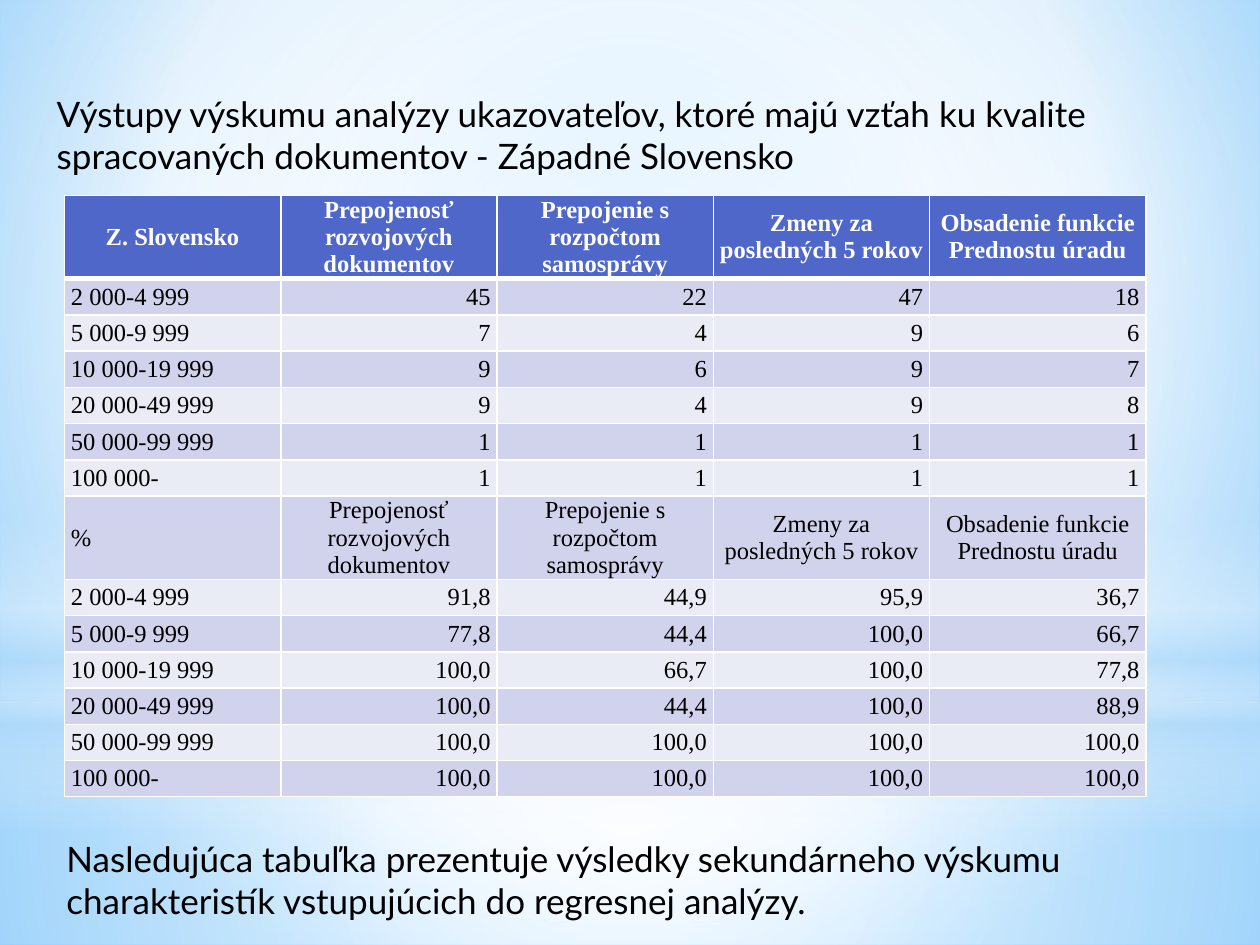
"""Build the slide with the Western Slovakia survey table."""
from lxml import etree
from pptx import Presentation
from pptx import util as u
from pptx.dml.color import RGBColor
from pptx.enum import shapes, text
from pptx.oxml import ns

TITLE = ("Výstupy výskumu analýzy ukazovateľov, ktoré majú vzťah ku kvalite "
         "spracovaných dokumentov - Západné Slovensko")
CLOSING = ("Nasledujúca tabuľka prezentuje výsledky sekundárneho výskumu "
           "charakteristík vstupujúcich do regresnej analýzy.")
INDICATORS = ["Prepojenosť rozvojových dokumentov", "Prepojenie s rozpočtom samosprávy",
              "Zmeny za posledných 5 rokov", "Obsadenie funkcie Prednostu úradu"]
SIZES = ["2 000-4 999", "5 000-9 999", "10 000-19 999",
         "20 000-49 999", "50 000-99 999", "100 000-"]
COUNTS = [["45", "22", "47", "18"], ["7", "4", "9", "6"], ["9", "6", "9", "7"],
          ["9", "4", "9", "8"], ["1"] * 4, ["1"] * 4]
SHARES = [["91,8", "44,9", "95,9", "36,7"], ["77,8", "44,4", "100,0", "66,7"],
          ["100,0", "66,7", "100,0", "77,8"], ["100,0", "44,4", "100,0", "88,9"],
          ["100,0"] * 4, ["100,0"] * 4]

BLACK = RGBColor(0x00, 0x00, 0x00)
WHITE = RGBColor(0xFF, 0xFF, 0xFF)
HEADER_BLUE = RGBColor(0x4E, 0x67, 0xC8)
BANDS = [RGBColor(0xE9, 0xEB, 0xF5), RGBColor(0xD0, 0xD3, 0xEB)]
SKY = RGBColor(0xB4, 0xDC, 0xFA)
BACKDROP_INNER = RGBColor(0x9E, 0xD5, 0xFF)
BACKDROP_OUTER = RGBColor(0x5B, 0xB9, 0xFF)

SLIDE_WIDTH, SLIDE_HEIGHT = u.Cm(25.4), u.Cm(19.05)
CENTRE = (50, 50, 50, 50)
BACKDROP_STOPS = [(0, BACKDROP_INNER, 100), (60, WHITE, 100), (100, BACKDROP_OUTER, 100)]
GLOWS = [
    (shapes.MSO_SHAPE.RECTANGLE, 14.17, 4.88, CENTRE,
     [(0, WHITE, 91), (37, WHITE, 76), (100, SKY, 79)]),
    (shapes.MSO_SHAPE.RECTANGLE, 0, 14.17, CENTRE,
     [(0, WHITE, 89), (48, WHITE, 62), (100, SKY, 79)]),
    (shapes.MSO_SHAPE.RECTANGLE, 10.46, 6.35, None,
     [(0, WHITE, 0), (29, WHITE, 30), (45, SKY, 40), (55, WHITE, 26),
      (65, SKY, 60), (100, WHITE, 0)]),
    (shapes.MSO_SHAPE.OVAL, 4.45, 14.17, CENTRE, [(0, WHITE, 100), (56, WHITE, 0)]),
]
TABLE_LEFT, TABLE_TOP, COLUMN_WIDTH = u.Cm(1.3), u.Cm(3.94), u.Cm(4.36)
HEADING_HEIGHT, ROW_HEIGHT = u.Cm(1.68), u.Cm(0.73)


def add_child(parent, tag, **attributes):
    child = etree.SubElement(parent, ns.qn(tag))
    for name, value in attributes.items():
        child.set(name, str(value))
    return child


def set_gradient(owner, stops, focus):
    """Replace the empty fill of an element; without a focus the blend runs downwards."""
    empty_fill = next(owner.iter(ns.qn("a:noFill")))
    gradient = etree.Element(ns.qn("a:gradFill"), rotWithShape="1")
    stop_list = add_child(gradient, "a:gsLst")
    for position, color, opacity in stops:
        stop = add_child(stop_list, "a:gs", pos=position * 1000)
        shade = add_child(stop, "a:srgbClr", val=color)
        if opacity < 100:
            add_child(shade, "a:alpha", val=opacity * 1000)
    if focus:
        route = add_child(gradient, "a:path", path="circle")
        sides = {side: share * 1000 for side, share in zip("ltrb", focus)}
        add_child(route, "a:fillToRect", **sides)
    else:
        add_child(gradient, "a:lin", ang=5400000, scaled=0)
    empty_fill.getparent().replace(empty_fill, gradient)


def write(frame, content, font_name, size, color, align, bold=False):
    paragraph = frame.paragraphs[0]
    paragraph.alignment = align
    run = paragraph.add_run()
    run.text = content
    run.font.name, run.font.size, run.font.bold = font_name, u.Pt(size), bold
    run.font.color.rgb = color


def place_statement(shape, content, left, top, width):
    shape.left, shape.top = u.Cm(left), u.Cm(top)
    shape.width, shape.height = u.Cm(width), u.Cm(1.96)
    frame = shape.text_frame
    frame.word_wrap = True
    frame.auto_size = text.MSO_AUTO_SIZE.NONE
    frame.vertical_anchor = text.MSO_ANCHOR.TOP
    write(frame, content, "Lato", 20, BLACK, text.PP_ALIGN.LEFT)


def add_borders(cell, top, bottom):
    properties = cell._tc.get_or_add_tcPr()
    for side, points in (("L", 1), ("R", 1), ("T", top), ("B", bottom)):
        line = add_child(properties, f"a:ln{side}", w=u.Pt(points))
        add_child(add_child(line, "a:solidFill"), "a:srgbClr", val=WHITE)


def add_results(slide):
    rows = [["Z. Slovensko"] + INDICATORS]
    rows += [[label] + values for label, values in zip(SIZES, COUNTS)]
    rows += [["%"] + INDICATORS]
    rows += [[label] + values for label, values in zip(SIZES, SHARES)]
    headings = (0, len(SIZES) + 1)
    heights = [HEADING_HEIGHT if i in headings else ROW_HEIGHT for i in range(len(rows))]
    table = slide.shapes.add_table(len(rows), len(rows[0]), TABLE_LEFT, TABLE_TOP,
                                   COLUMN_WIDTH * len(rows[0]), sum(heights)).table
    for column in table.columns:
        column.width = COLUMN_WIDTH
    for i, values in enumerate(rows):
        table.rows[i].height = heights[i]
        header = i == 0
        for j, value in enumerate(values):
            cell = table.cell(i, j)
            cell.margin_left = cell.margin_right = u.Cm(0.13)
            cell.margin_top = cell.margin_bottom = 0
            cell.vertical_anchor = text.MSO_ANCHOR.MIDDLE
            add_borders(cell, 3 if i == 1 else 1, 3 if header else 1)
            cell.fill.solid()
            cell.fill.fore_color.rgb = HEADER_BLUE if header else BANDS[i % 2]
            if header or (i in headings and j > 0):
                align = text.PP_ALIGN.CENTER
            else:
                align = text.PP_ALIGN.RIGHT if j > 0 else text.PP_ALIGN.LEFT
            write(cell.text_frame, value, "Times New Roman", 14,
                  WHITE if header else BLACK, align, header)


def main():
    presentation = Presentation()
    presentation.slide_width, presentation.slide_height = SLIDE_WIDTH, SLIDE_HEIGHT
    slide = presentation.slides.add_slide(presentation.slide_layouts[5])
    slide.background.fill.background()
    set_gradient(slide.element, BACKDROP_STOPS, (20, 10, 20, 60))
    for kind, top, height, focus, stops in GLOWS:
        glow = slide.shapes.add_shape(kind, 0, u.Cm(top), SLIDE_WIDTH, u.Cm(height))
        glow.shadow.inherit = False
        glow.fill.background()
        set_gradient(glow.element, stops, focus)
        glow.line.fill.background()
    title = slide.shapes.title
    slide.shapes.element.append(title.element)
    place_statement(title, TITLE, 0.89, 1.73, 24.51)
    closing = slide.shapes.add_textbox(0, 0, 0, 0)
    place_statement(closing, CLOSING, 1.09, 16.76, 23.01)
    add_results(slide)
    presentation.save("out.pptx")


if __name__ == "__main__":
    main()
